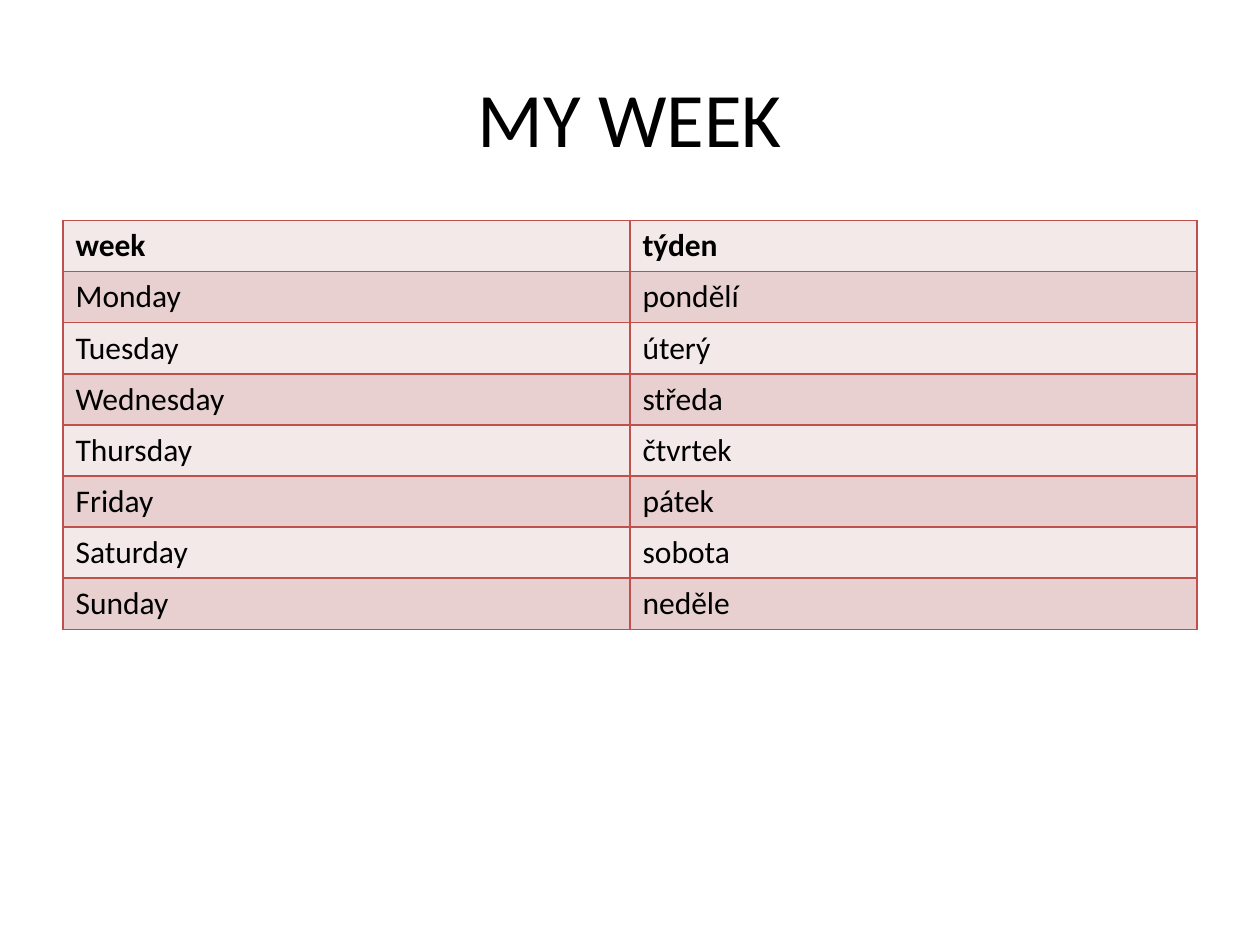
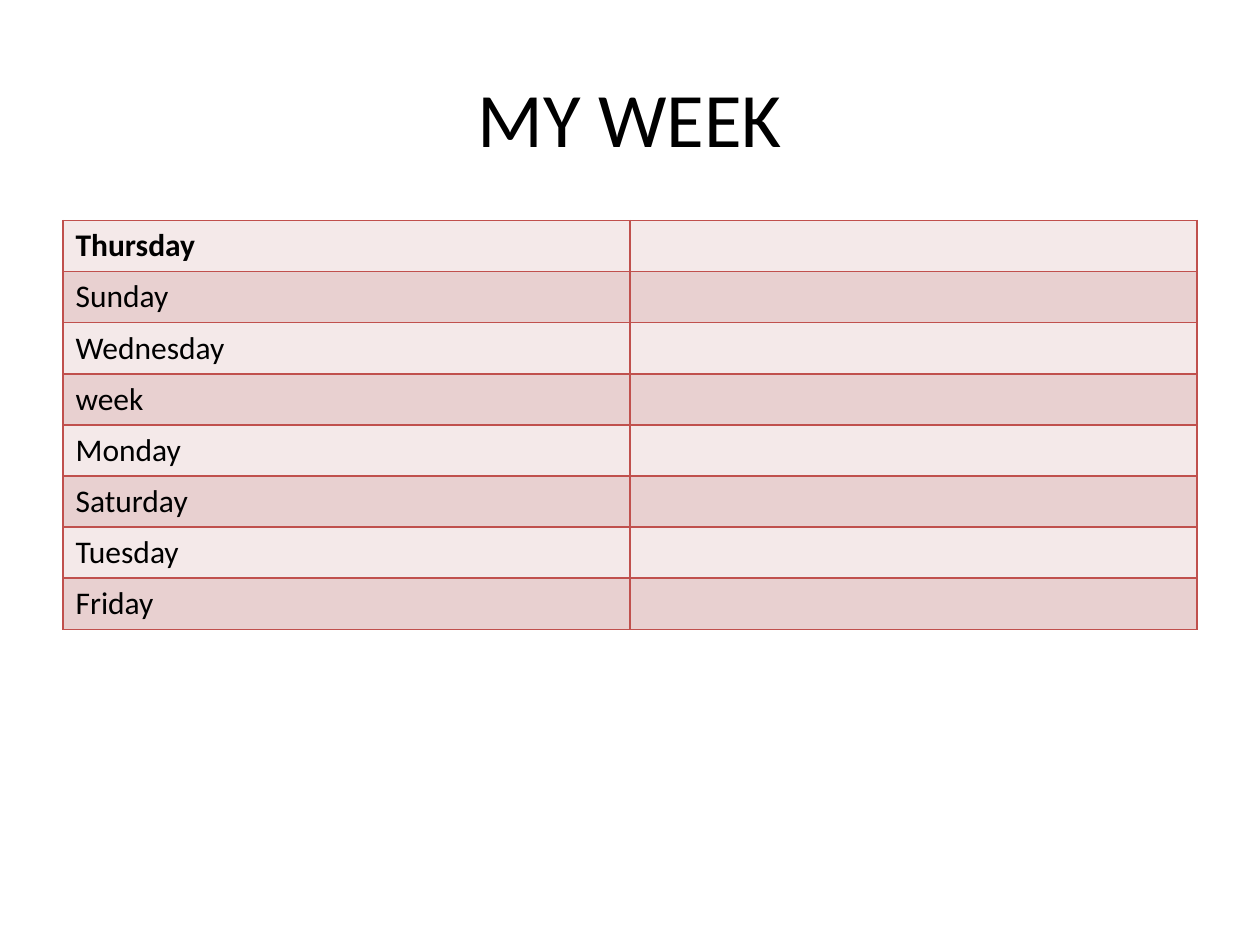
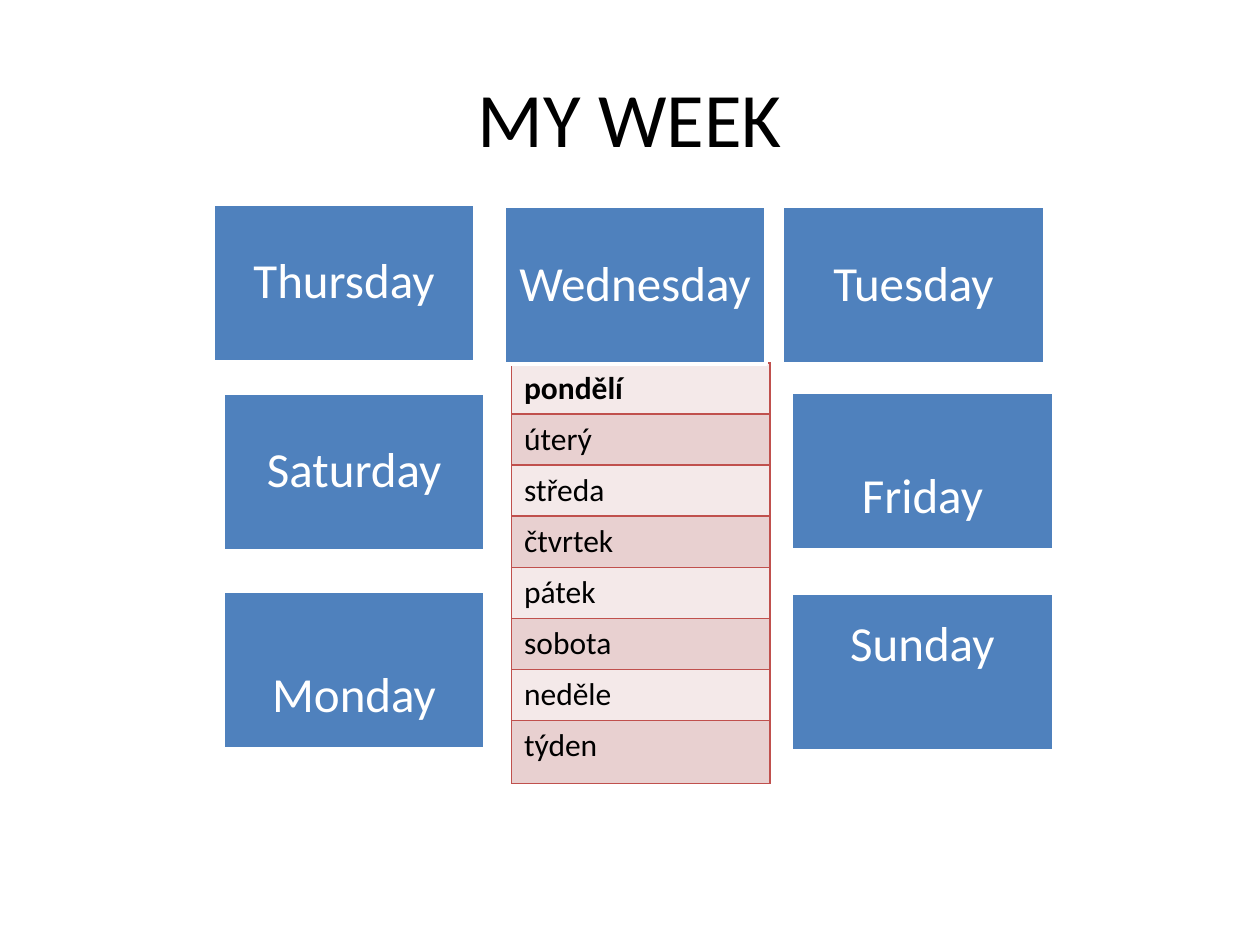
from pptx import Presentation, util as u
from pptx.dml.color import RGBColor
from pptx.enum import shapes, text
from pptx.oxml import parse_xml
from pptx.oxml.ns import nsdecls

COLORS = {"ink": "000000", "white": "FFFFFF", "box": "4F81BD",
          "border": "C0504D", "light": "F4E9E9", "dark": "E8D0D0"}
FONT = "Calibri"
ROW_HEIGHT = 0.405
BOX_WIDTH, BOX_HEIGHT = 2.08, 1.25
BOX_INSET, SHIFTED_INSET = 0.12, 0.2

DAYS = [("week", "týden"), ("Monday", "pondělí"), ("Tuesday", "úterý"),
        ("Wednesday", "středa"), ("Thursday", "čtvrtek"), ("Friday", "pátek"),
        ("Saturday", "sobota"), ("Sunday", "neděle")]
QUIZ_ORDER = ["Thursday", "Sunday", "Wednesday", "week",
              "Monday", "Saturday", "Tuesday", "Friday"]
CZECH_DAYS = [czech for _, czech in DAYS[1:] + DAYS[:1]]

MIDDLE, TOP, BOTTOM = (text.MSO_ANCHOR.MIDDLE, text.MSO_ANCHOR.TOP,
                       text.MSO_ANCHOR.BOTTOM)
DAY_BOXES = [("Thursday", 1.69, 1.62, MIDDLE), ("Wednesday", 4, 1.64, MIDDLE),
             ("Tuesday", 6.21, 1.64, MIDDLE), ("Monday", 1.77, 4.69, BOTTOM),
             ("Saturday", 1.77, 3.12, MIDDLE), ("Friday", 6.28, 3.11, BOTTOM),
             ("Sunday", 6.28, 4.71, TOP)]


def style(paragraph, size, color, bold=False):
    font = paragraph.font
    font.name, font.size, font.bold = FONT, u.Pt(size), bold
    font.color.rgb = RGBColor.from_string(COLORS[color])


def add_word_table(slide, rows, left, top, width):
    """Add a banded, bordered table with a bold first row."""
    table = slide.shapes.add_table(
        len(rows), len(rows[0]), u.Inches(left), u.Inches(top),
        u.Inches(width), u.Inches(ROW_HEIGHT * len(rows))).table
    table.first_row = table.horz_banding = False
    for r, words in enumerate(rows):
        for c, word in enumerate(words):
            cell = table.cell(r, c)
            cell.text = word
            style(cell.text_frame.paragraphs[0], 18, "ink", bold=r == 0)
            properties = cell._tc.get_or_add_tcPr()
            for side in "LRTB":
                properties.append(parse_xml(
                    f'<a:ln{side} {nsdecls("a")} w="12700"><a:solidFill>'
                    f'<a:srgbClr val="{COLORS["border"]}"/>'
                    f'</a:solidFill></a:ln{side}>'))
            cell.fill.solid()
            band = COLORS["dark" if r % 2 else "light"]
            cell.fill.fore_color.rgb = RGBColor.from_string(band)
    return table


prs = Presentation()
prs.slide_width, prs.slide_height = u.Inches(10), u.Inches(7.5)

slides = []
for _ in range(3):
    slide = prs.slides.add_slide(prs.slide_layouts[5])
    title = slide.shapes.title
    title.left, title.top = u.Inches(0.5), u.Inches(0.3)
    title.width, title.height = u.Inches(9), u.Inches(1.25)
    title.text_frame.text = "MY WEEK"
    title.text_frame.vertical_anchor = MIDDLE
    heading = title.text_frame.paragraphs[0]
    heading.alignment = text.PP_ALIGN.CENTER
    style(heading, 44, "ink")
    slides.append(slide)
vocabulary, quiz, matching = slides

add_word_table(vocabulary, DAYS, 0.5, 1.75, 9)
add_word_table(quiz, [(day, "") for day in QUIZ_ORDER], 0.5, 1.75, 9)

czech_table = add_word_table(matching, [(day,) for day in CZECH_DAYS],
                             4.06, 2.88, 2.05)
czech_table.rows[len(CZECH_DAYS) - 1].height = u.Inches(0.5)

for day, left, top, anchor in DAY_BOXES:
    box = matching.shapes.add_shape(
        shapes.MSO_SHAPE.RECTANGLE, u.Inches(left), u.Inches(top),
        u.Inches(BOX_WIDTH), u.Inches(BOX_HEIGHT))
    box.shadow.inherit = False
    box.fill.solid()
    box.fill.fore_color.rgb = RGBColor.from_string(COLORS["box"])
    box.line.color.rgb = RGBColor.from_string(COLORS["white"])
    box.line.width = u.Pt(2)
    frame = box.text_frame
    frame.word_wrap = True
    frame.vertical_anchor = anchor
    frame.margin_left = frame.margin_right = u.Inches(BOX_INSET)
    frame.margin_top = frame.margin_bottom = u.Inches(
        BOX_INSET if anchor == MIDDLE else SHIFTED_INSET)
    frame.text = day
    label = frame.paragraphs[0]
    label.alignment = text.PP_ALIGN.CENTER
    label.line_spacing = 0.9
    style(label, 28, "white")

prs.save("out.pptx")
